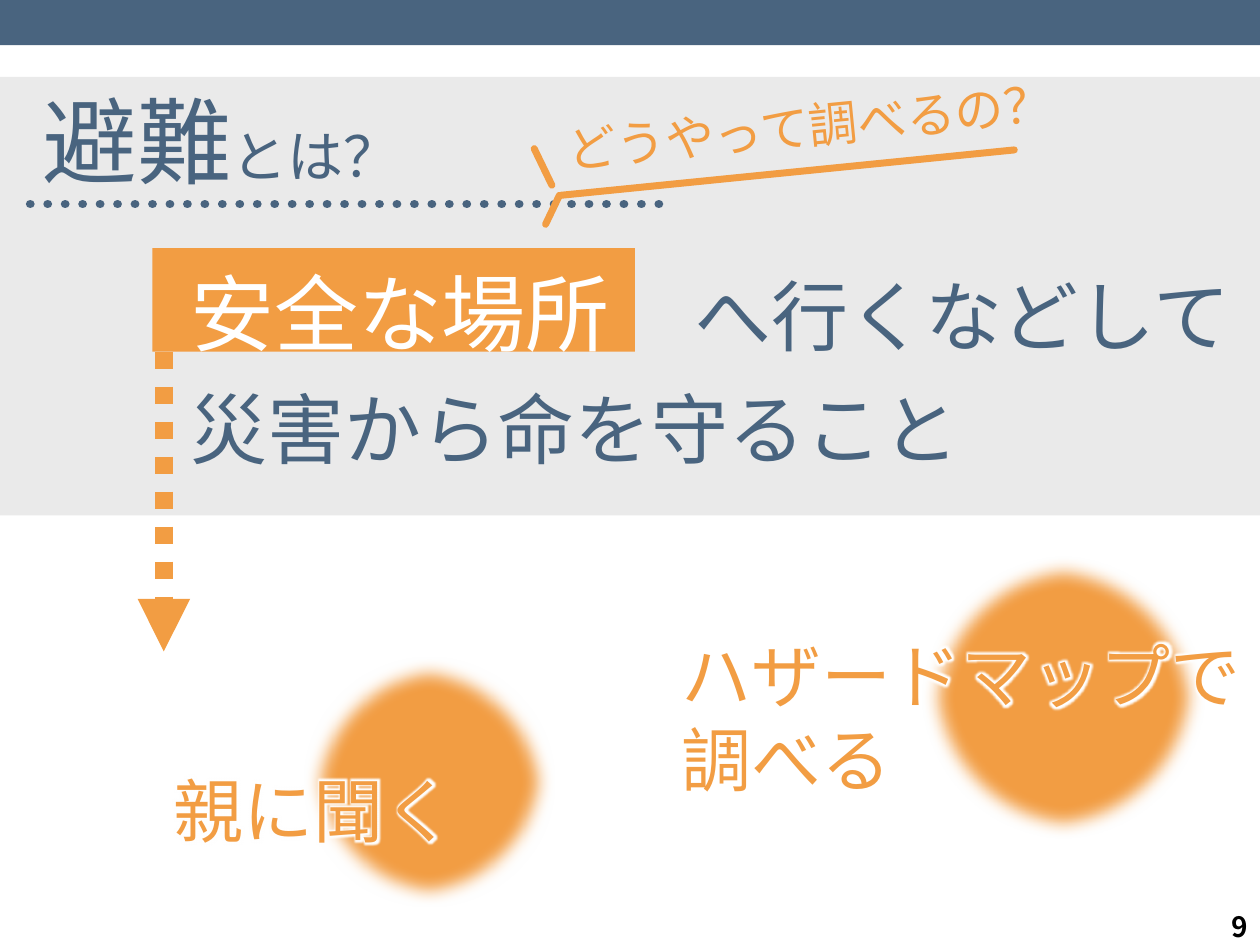
"""Build the slide that explains what evacuation means."""
import lxml.etree
import pptx
import pptx.dml.color
import pptx.enum.dml
import pptx.enum.shapes
import pptx.enum.text
import pptx.oxml
import pptx.oxml.ns
import pptx.util

Inches = pptx.util.Inches
RGBColor = pptx.dml.color.RGBColor
MSO_SHAPE = pptx.enum.shapes.MSO_SHAPE
PP_ALIGN = pptx.enum.text.PP_ALIGN
MSO_ANCHOR = pptx.enum.text.MSO_ANCHOR
qn = pptx.oxml.ns.qn

FONT = "Noto Sans CJK JP"
SLATE = RGBColor(0x49, 0x64, 0x7F)
ORANGE = RGBColor(0xF2, 0x9D, 0x43)
GREY = RGBColor(0xEA, 0xEA, 0xEA)
WHITE = RGBColor(0xFF, 0xFF, 0xFF)
BLACK = RGBColor(0, 0, 0)
NAMESPACE = 'xmlns:a="http://schemas.openxmlformats.org/drawingml/2006/main"'
GLOW = (f'<a:effectLst {NAMESPACE}><a:glow rad="63500"><a:srgbClr val="FFFFFF"/>'
        '</a:glow></a:effectLst>')
SOFT_EDGE = f'<a:effectLst {NAMESPACE}><a:softEdge rad="127000"/></a:effectLst>'


def write(box, *lines, align=PP_ALIGN.LEFT, anchor=MSO_ANCHOR.TOP,
          spacing=1.0, bold=False, glow=False):
    """Fill a box with lines, each a list of (text, size, colour)."""
    frame = box.text_frame
    frame.word_wrap = True
    frame.auto_size = pptx.enum.text.MSO_AUTO_SIZE.NONE
    frame.vertical_anchor = anchor
    for number, line in enumerate(lines):
        para = frame.add_paragraph() if number else frame.paragraphs[0]
        para.alignment = align
        para.line_spacing = spacing
        for text, size, color in line:
            span = para.add_run()
            span.text = text
            span.font.size = pptx.util.Pt(size)
            span.font.bold = bold
            span.font.color.rgb = color
            properties = span.font._element
            if glow:
                properties.append(pptx.oxml.parse_xml(GLOW))
            span.font.name = FONT
            lxml.etree.SubElement(properties, qn("a:ea"), typeface=FONT)


def add_line(shapes, start, end, color, width, dash=None, cap="flat", arrow=False):
    """Draw a straight line between two points given in inches."""
    line = shapes.add_connector(pptx.enum.shapes.MSO_CONNECTOR.STRAIGHT,
                                *map(Inches, start + end))
    line.line.color.rgb = color
    line.line.width = pptx.util.Pt(width)
    if dash:
        line.line.dash_style = dash
    outline = line.line._get_or_add_ln()
    outline.set("cap", cap)
    if arrow:
        lxml.etree.SubElement(outline, qn("a:tailEnd"), type="triangle")
    lxml.etree.SubElement(line._element.spPr, qn("a:effectLst"))


deck = pptx.Presentation()
deck.slide_width, deck.slide_height = Inches(10), Inches(7.5)
page = deck.slides.add_slide(deck.slide_layouts[5])
shapes = page.shapes

for place, color in [((0, 0, 10, 0.36), SLATE),
                     ((0, 0.61, 10, 3.48), GREY),
                     ((1.21, 1.97, 3.83, 0.82), ORANGE)]:
    band = shapes.add_shape(MSO_SHAPE.RECTANGLE, *map(Inches, place))
    band.fill.solid()
    band.fill.fore_color.rgb = color
    band.line.fill.background()
    band.shadow.inherit = False

title = shapes.title
title.left, title.top, title.width, title.height = map(Inches, (0.24, 0.61, 4.65, 1.01))
write(title, [("避難", 54, SLATE), ("とは？", 32, SLATE)])
shapes._spTree.append(title._element)

number_box = shapes.add_textbox(*map(Inches, (7.75, 7.2, 2.25, 0.3)))
write(number_box, [("9", 16, BLACK)], align=PP_ALIGN.RIGHT,
      anchor=MSO_ANCHOR.MIDDLE, bold=True)

definition = shapes.add_textbox(*map(Inches, (1.41, 1.87, 8.59, 1.96)))
write(definition,
      [("安全な場所　", 48, WHITE), ("へ行くなどして", 44, SLATE)],
      [("災害から命を守ること", 44, SLATE)], spacing=1.2)

for left, top, size in [(2.41, 5.21, 1.99), (7.31, 4.41, 2.25)]:
    spot = shapes.add_shape(MSO_SHAPE.OVAL, *map(Inches, (left, top, size, size)))
    spot.fill.solid()
    spot.fill.fore_color.rgb = ORANGE
    spot.line.color.rgb = ORANGE
    spot.line.width = pptx.util.Pt(1)
    spot._element.spPr.append(pptx.oxml.parse_xml(SOFT_EDGE))

for place, texts in [((1.28, 6.04, 2.9, 0.77), ["親に聞く"]),
                     ((5.31, 4.97, 4.77, 1.45), ["ハザードマップで", "調べる"])]:
    answer = shapes.add_textbox(*map(Inches, place))
    write(answer, *[[(text, 40, ORANGE)] for text in texts], glow=True)

DOTS = pptx.enum.dml.MSO_LINE.ROUND_DOT
add_line(shapes, (1.3, 2.79), (1.3, 5.17), ORANGE, 10, dash=DOTS, arrow=True)
add_line(shapes, (0.24, 1.62), (5.34, 1.62), SLATE, 5, dash=DOTS, cap="rnd")

callout = shapes.add_group_shape()
question = callout.shapes.add_textbox(*map(Inches, (4.4, 0.73, 3.69, 0.57)))
question.rotation = 354.4
write(question, [("どうやって調べるの？", 28, ORANGE)])
for start, end in [((4.45, 1.55), (8.05, 1.19)),
                   ((4.24, 1.18), (4.38, 1.47)),
                   ((4.44, 1.55), (4.33, 1.78))]:
    add_line(callout.shapes, start, end, ORANGE, 4, cap="rnd")

deck.save("out.pptx")
